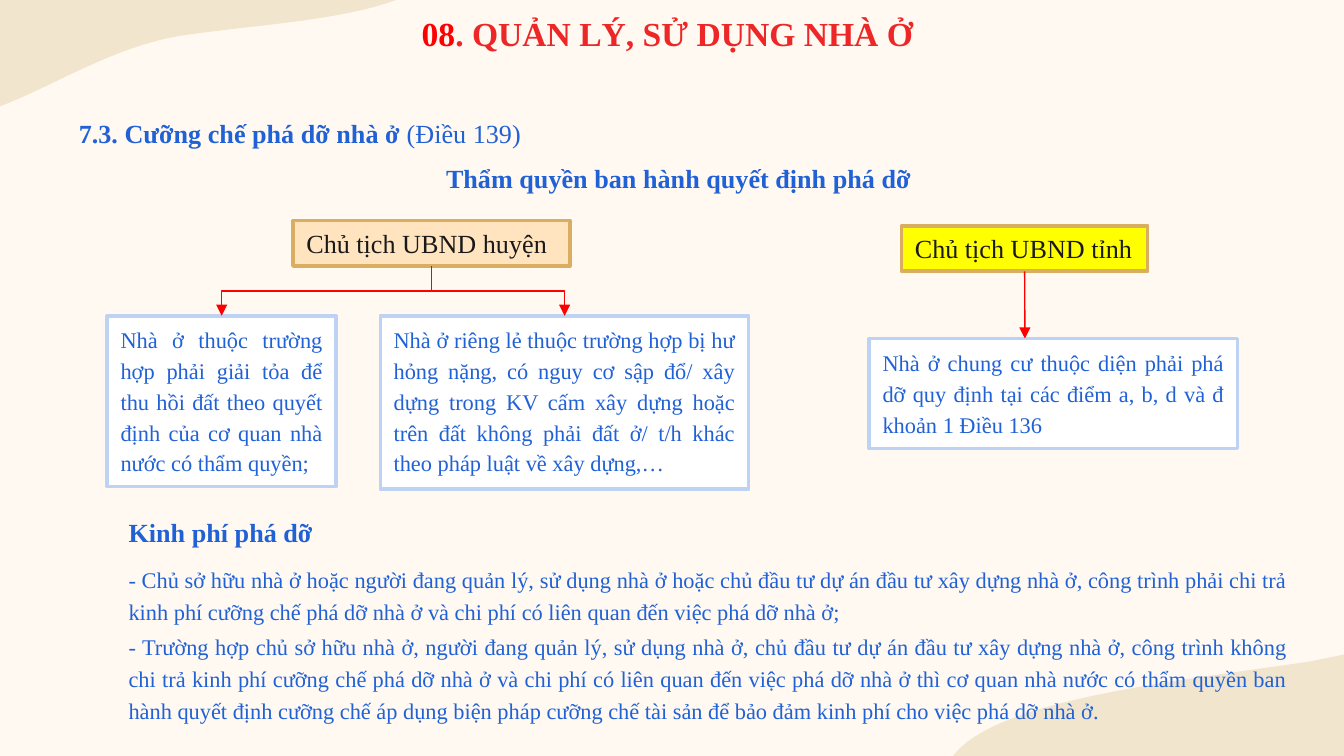
from dataclasses import dataclass

from lxml.etree import SubElement
from pptx import Presentation
from pptx.dml.color import RGBColor
from pptx.enum.shapes import MSO_CONNECTOR as Link, MSO_SHAPE as Preset
from pptx.enum.text import MSO_ANCHOR as Anchor, MSO_AUTO_SIZE as Fit, PP_ALIGN as Align
from pptx.oxml.ns import qn
from pptx.util import Cm, Pt

FONT = "Times New Roman"
BLUE, DARK, RED, SAND = "2061D6", "191919", "FF0000", "F2E5CE"
GOLD, PALE_BLUE, WHITE = "D9AE60", "BED2F4", "FFFFFF"
BOTTOM, TOP = 2, 0


@dataclass
class Area:
    left: float
    top: float
    width: float
    height: float

    def lengths(self) -> tuple:
        return Cm(self.left), Cm(self.top), Cm(self.width), Cm(self.height)


@dataclass
class Style:
    size: float = 14
    color: str = BLUE
    bold: bool = False
    align: Align = Align.LEFT
    spacing: object = None
    before: float = 0
    after: float = 0
    wrap: bool = False


@dataclass
class Box:
    area: Area
    text: str
    fill: str
    border: str
    style: Style


def rgb(color: str) -> RGBColor:
    return RGBColor.from_string(color)


def write(frame, paragraphs: list[str], style: Style) -> None:
    frame.word_wrap = style.wrap
    frame.auto_size = Fit.SHAPE_TO_FIT_TEXT
    for index, text in enumerate(paragraphs):
        paragraph = frame.add_paragraph() if index else frame.paragraphs[0]
        paragraph.text = text
        paragraph.alignment = style.align
        paragraph.space_before = Pt(style.before)
        paragraph.space_after = Pt(style.after)
        if style.spacing:
            paragraph.line_spacing = style.spacing
        font = paragraph.font
        font.name, font.size, font.bold = FONT, Pt(style.size), style.bold
        font.color.rgb = rgb(style.color)


def add_text(slide, area: Area, paragraphs: list[str], style: Style):
    frame = slide.shapes.add_textbox(*area.lengths()).text_frame
    write(frame, paragraphs, style)
    return frame


def add_box(slide, box: Box):
    shape = slide.shapes.add_shape(Preset.RECTANGLE, *box.area.lengths())
    shape.shadow.inherit = False
    shape.fill.solid()
    shape.fill.fore_color.rgb = rgb(box.fill)
    shape.line.color.rgb = rgb(box.border)
    shape.line.width = Pt(2)
    shape.text_frame.vertical_anchor = Anchor.TOP
    write(shape.text_frame, [box.text], box.style)
    return shape


def bezier(start: tuple, first: tuple, second: tuple, end: tuple, steps: int = 24) -> list:
    return [
        tuple(
            (1 - t) ** 3 * a + 3 * (1 - t) ** 2 * t * b + 3 * (1 - t) * t**2 * c + t**3 * d
            for a, b, c, d in zip(start, first, second, end)
        )
        for t in (step / steps for step in range(1, steps + 1))
    ]


def add_wave(slide, start: tuple, curves: list, corner: tuple) -> None:
    points = [start]
    for curve in curves:
        points += bezier(points[-1], *curve)
    outline = [(Cm(x), Cm(y)) for x, y in points + [corner]]
    builder = slide.shapes.build_freeform(*outline[0])
    builder.add_line_segments(outline[1:], close=True)
    wave = builder.convert_to_shape()
    wave.shadow.inherit = False
    wave.fill.solid()
    wave.fill.fore_color.rgb = rgb(SAND)
    wave.line.fill.background()


def add_arrow(slide, kind: Link, start: tuple = (0, 0), end: tuple = (0, 0)):
    arrow = slide.shapes.add_connector(kind, *start, *end)
    arrow.line.color.rgb = rgb(RED)
    arrow.line.width = Pt(0.75)
    SubElement(arrow.line._get_or_add_ln(), qn("a:tailEnd"), type="triangle")
    SubElement(arrow.element.spPr, qn("a:effectLst"))
    return arrow


def add_branch(slide, authority, case) -> None:
    branch = add_arrow(slide, Link.ELBOW)
    branch.begin_connect(authority, BOTTOM)
    branch.end_connect(case, TOP)
    across, down = branch.end_x - branch.begin_x, branch.end_y - branch.begin_y
    middle_x, middle_y = branch.begin_x + across // 2, branch.begin_y + down // 2
    branch.width, branch.height = down, abs(across)
    branch.left, branch.top = middle_x - down // 2, middle_y - abs(across) // 2
    frame = branch.element.spPr.find(qn("a:xfrm"))
    frame.set("rot", str((270 if across > 0 else 90) * 60000))
    frame.set("flipH", "1" if across > 0 else "0")


def add_title(slide) -> None:
    title = slide.shapes.title
    title.left, title.top, title.width, title.height = Area(-0.53, 0.03, 26.29, 1.22).lengths()
    frame = title.text_frame
    frame.auto_size = Fit.NONE
    frame.word_wrap = True
    frame.vertical_anchor = Anchor.BOTTOM
    frame.margin_left = frame.margin_right = frame.margin_top = frame.margin_bottom = Cm(0.25)
    paragraph = frame.paragraphs[0]
    paragraph.alignment = Align.CENTER
    paragraph.font.name, paragraph.font.size, paragraph.font.bold = FONT, Pt(18), True
    for text, color in (("08", RED), (". QUẢN LÝ, SỬ DỤNG NHÀ Ở", "ED2727")):
        run = paragraph.add_run()
        run.text = text
        run.font.color.rgb = rgb(color)


def main() -> None:
    deck = Presentation()
    deck.slide_width, deck.slide_height = Cm(25.4), Cm(14.29)
    slide = deck.slides.add_slide(deck.slide_layouts[5])
    slide.background.fill.solid()
    slide.background.fill.fore_color.rgb = rgb("FFF9F1")

    add_wave(slide, (0, 2.01), [
        ((0.99, 1.65), (2.26, 0.79), (3.68, 0.64)),
        ((4.98, 0.46), (6.45, 0.38), (7.49, 0)),
    ], (0, 0))
    add_wave(slide, (25.4, 12.37), [
        ((25.2, 12.42), (25, 12.45), (24.79, 12.5)),
        ((22.07, 12.9), (18.82, 13.23), (18.01, 14.29)),
    ], (25.4, 14.29))
    add_title(slide)

    heading = Style(bold=True)
    section = add_text(slide, Area(1.24, 2.06, 8.89, 0.89), ["7.3. Cưỡng chế phá dỡ nhà ở "],
                       Style(bold=True, align=Align.JUSTIFY, spacing=1.07, before=2))
    article = section.paragraphs[0].add_run()
    article.text = "(Điều 139)"
    article.font.bold = False
    add_text(slide, Area(8.18, 2.95, 9.32, 0.86), ["Thẩm quyền ban hành quyết định phá dỡ"], heading)
    add_text(slide, Area(2.18, 9.63, 4.01, 0.86), ["Kinh phí phá dỡ"], heading)
    add_text(slide, Area(2.18, 10.49, 22.43, 3.35), [
        "- Chủ sở hữu nhà ở hoặc người đang quản lý, sử dụng nhà ở hoặc chủ đầu tư dự án đầu tư xây dựng nhà ở, "
        "công trình phải chi trả kinh phí cưỡng chế phá dỡ nhà ở và chi phí có liên quan đến việc phá dỡ nhà ở;",
        "- Trường hợp chủ sở hữu nhà ở, người đang quản lý, sử dụng nhà ở, chủ đầu tư dự án đầu tư xây dựng nhà ở, "
        "công trình không chi trả kinh phí cưỡng chế phá dỡ nhà ở và chi phí có liên quan đến việc phá dỡ nhà ở "
        "thì cơ quan nhà nước có thẩm quyền ban hành quyết định cưỡng chế áp dụng biện pháp cưỡng chế tài sản "
        "để bảo đảm kinh phí cho việc phá dỡ nhà ở.",
    ], Style(12, align=Align.JUSTIFY, spacing=Pt(17), before=1, after=1, wrap=True))

    office = Style(color=DARK)
    case = Style(12, align=Align.JUSTIFY, spacing=Pt(16.5), before=6, after=6, wrap=True)
    district, province, clearance, detached, _ = [add_box(slide, box) for box in (
        Box(Area(5.54, 4.17, 5.23, 0.86), "Chủ tịch UBND huyện", "FFE4BF", GOLD, office),
        Box(Area(17.04, 4.27, 4.65, 0.86), "Chủ tịch UBND tỉnh", "FFFF00", GOLD, office),
        Box(Area(2.03, 5.97, 4.32, 3.23), "Nhà ở thuộc trường hợp phải giải tỏa để thu hồi đất theo "
            "quyết định của cơ quan nhà nước có thẩm quyền;", WHITE, PALE_BLUE, case),
        Box(Area(7.19, 5.97, 6.96, 3.28), "Nhà ở riêng lẻ thuộc trường hợp bị hư hỏng nặng, có nguy cơ "
            "sập đổ/ xây dựng trong KV cấm xây dựng hoặc trên đất không phải đất ở/ t/h khác theo "
            "pháp luật về xây dựng,…", WHITE, PALE_BLUE, case),
        Box(Area(16.43, 6.4, 6.96, 2.08), "Nhà ở chung cư thuộc diện phải phá dỡ quy định tại các điểm "
            "a, b, d và đ khoản 1 Điều 136", WHITE, PALE_BLUE, case),
    )]
    for destination in (clearance, detached):
        add_branch(slide, district, destination)
    province_arrow = add_arrow(slide, Link.STRAIGHT, (Cm(19.37), Cm(5.13)), (Cm(19.37), Cm(6.4)))
    province_arrow.begin_connect(province, BOTTOM)

    deck.save("out.pptx")


if __name__ == "__main__":
    main()
